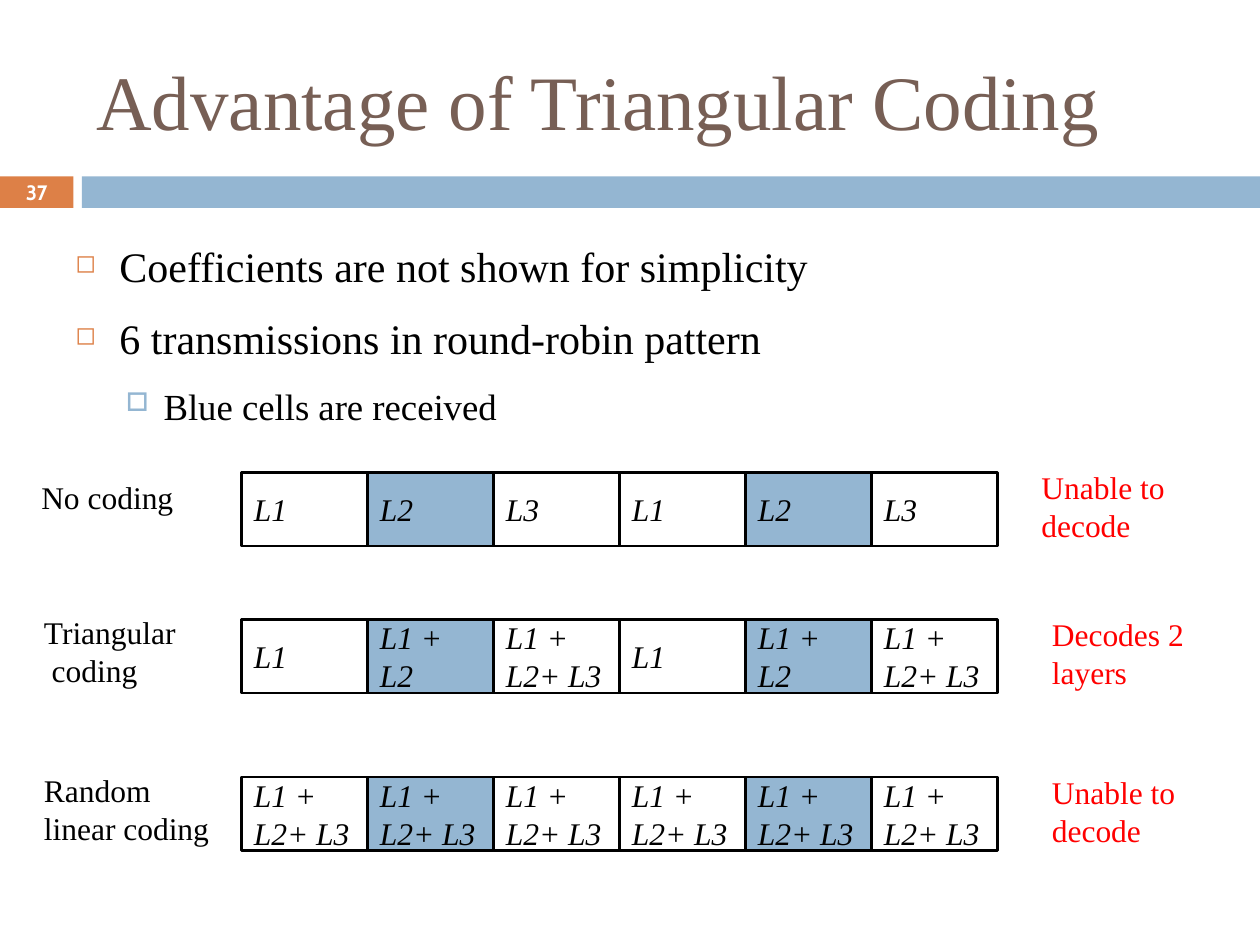
from dataclasses import dataclass
from lxml import etree
from pptx import Presentation
from pptx.dml.color import RGBColor
from pptx.enum.shapes import MSO_SHAPE
from pptx.enum.text import MSO_ANCHOR, PP_ALIGN
from pptx.oxml.ns import qn
from pptx.util import Pt

RECT = MSO_SHAPE.RECTANGLE
TOP, MIDDLE = MSO_ANCHOR.TOP, MSO_ANCHOR.MIDDLE
LEFT, CENTER = PP_ALIGN.LEFT, PP_ALIGN.CENTER

COLORS = {
    "black": "000000",
    "white": "FFFFFF",
    "red": "FF0000",
    "brown": "775F55",
    "orange": "DD8047",
    "blue": "94B6D2",
}
SERIF = "Times New Roman"
CELL_LEFT, CELL_WIDTH, CELL_HEIGHT = 138, 72, 42
RECEIVED = (1, 4)
ALL_LAYERS = "L1 + L2+ L3"


@dataclass
class Box:
    left: float
    top: float
    width: float
    height: float


@dataclass
class Style:
    size: float
    color: str = "black"
    font: str = SERIF
    bold: bool = False
    italic: bool = False


@dataclass
class Bullet:
    text: str
    size: float
    mark: str
    color: str
    scale: int
    margin: float
    hang: float


@dataclass
class Scheme:
    top: float
    cycle: tuple[str, str, str]
    label: str
    label_box: Box
    result: str
    result_box: Box


BULLETS = [
    Bullet("Coefficients are not shown for simplicity", 24, "◻", "orange", 60, 25.2, 25.2),
    Bullet("6 transmissions in round-robin pattern", 24, "◻", "orange", 60, 25.2, 25.2),
    Bullet("Blue cells are received", 21, "□", "blue", 70, 50.4, 21.6),
]
SCHEMES = [
    Scheme(270, ("L1", "L2", "L3"), "No coding", Box(16.5, 269.5, 98, 29),
           "Unable to decode", Box(588, 264, 90, 51)),
    Scheme(354, ("L1", "L1 + L2", ALL_LAYERS), "Triangular\v coding", Box(18, 347, 90, 51),
           "Decodes 2 layers", Box(594, 348, 90, 51)),
    Scheme(444, (ALL_LAYERS,) * 3, "Random linear coding", Box(18, 437, 120, 51),
           "Unable to decode", Box(594, 438, 90, 51)),
]


def rgb(name: str) -> RGBColor:
    return RGBColor.from_string(COLORS[name])


def set_font(p, style: Style) -> None:
    p.font.name = style.font
    p.font.size = Pt(style.size)
    p.font.bold = style.bold
    p.font.italic = style.italic
    p.font.color.rgb = rgb(style.color)


def write(tf, text: str, style: Style, anchor=TOP, align=LEFT) -> None:
    tf.word_wrap = True
    tf.vertical_anchor = anchor
    p = tf.paragraphs[0]
    p.text = text
    p.alignment = align
    set_font(p, style)


def add_rect(s, box: Box, fill: str, line: str | None = None):
    sp = s.shapes.add_shape(RECT, Pt(box.left), Pt(box.top), Pt(box.width), Pt(box.height))
    sp.shadow.inherit = False
    sp.fill.solid()
    sp.fill.fore_color.rgb = rgb(fill)
    if line:
        sp.line.color.rgb = rgb(line)
        sp.line.width = Pt(1.5)
    else:
        sp.line.fill.background()
    return sp


def add_text_frame(s, box: Box):
    sp = s.shapes.add_textbox(Pt(box.left), Pt(box.top), Pt(box.width), Pt(box.height))
    sp.text_frame.word_wrap = True
    return sp.text_frame


def add_bullets(s, box: Box, bullets: list[Bullet]) -> None:
    tf = add_text_frame(s, box)
    for i, bullet in enumerate(bullets):
        p = tf.add_paragraph() if i else tf.paragraphs[0]
        p.text = bullet.text
        p.space_before = Pt(12 if i else 0)
        set_font(p, Style(bullet.size))
        pPr = p._p.get_or_add_pPr()
        pPr.set("marL", str(Pt(bullet.margin)))
        pPr.set("indent", str(-Pt(bullet.hang)))
        color = etree.Element(qn("a:buClr"))
        etree.SubElement(color, qn("a:srgbClr"), val=COLORS[bullet.color])
        scale = etree.Element(qn("a:buSzPct"), val=str(bullet.scale * 1000))
        mark = etree.Element(qn("a:buChar"), char=bullet.mark)
        for el in (color, scale, mark):
            pPr.find(qn("a:defRPr")).addprevious(el)


def add_scheme(s, scheme: Scheme) -> None:
    for col, text in enumerate(scheme.cycle * 2):
        box = Box(CELL_LEFT + col * CELL_WIDTH, scheme.top, CELL_WIDTH, CELL_HEIGHT)
        sp = add_rect(s, box, "blue" if col in RECEIVED else "white", "black")
        write(sp.text_frame, text, Style(18, italic=True), MIDDLE)
    write(add_text_frame(s, scheme.label_box), scheme.label, Style(18))
    write(add_text_frame(s, scheme.result_box), scheme.result, Style(18, "red"))


def main() -> None:
    prs = Presentation()
    prs.slide_width, prs.slide_height = Pt(720), Pt(540)
    s = prs.slides.add_slide(prs.slide_layouts[6])
    number = add_rect(s, Box(0, 100.8, 42, 18), "orange")
    write(number.text_frame, "37", Style(11.9, "white", "Cabin", bold=True), MIDDLE, CENTER)
    add_rect(s, Box(46.8, 100.8, 673.2, 18), "blue")
    title = add_text_frame(s, Box(48, 18, 642, 78))
    write(title, "Advantage of Triangular Coding", Style(44, "brown"), MIDDLE)
    add_bullets(s, Box(36, 134, 618, 340), BULLETS)
    for scheme in SCHEMES:
        add_scheme(s, scheme)
    prs.save("out.pptx")


if __name__ == "__main__":
    main()
